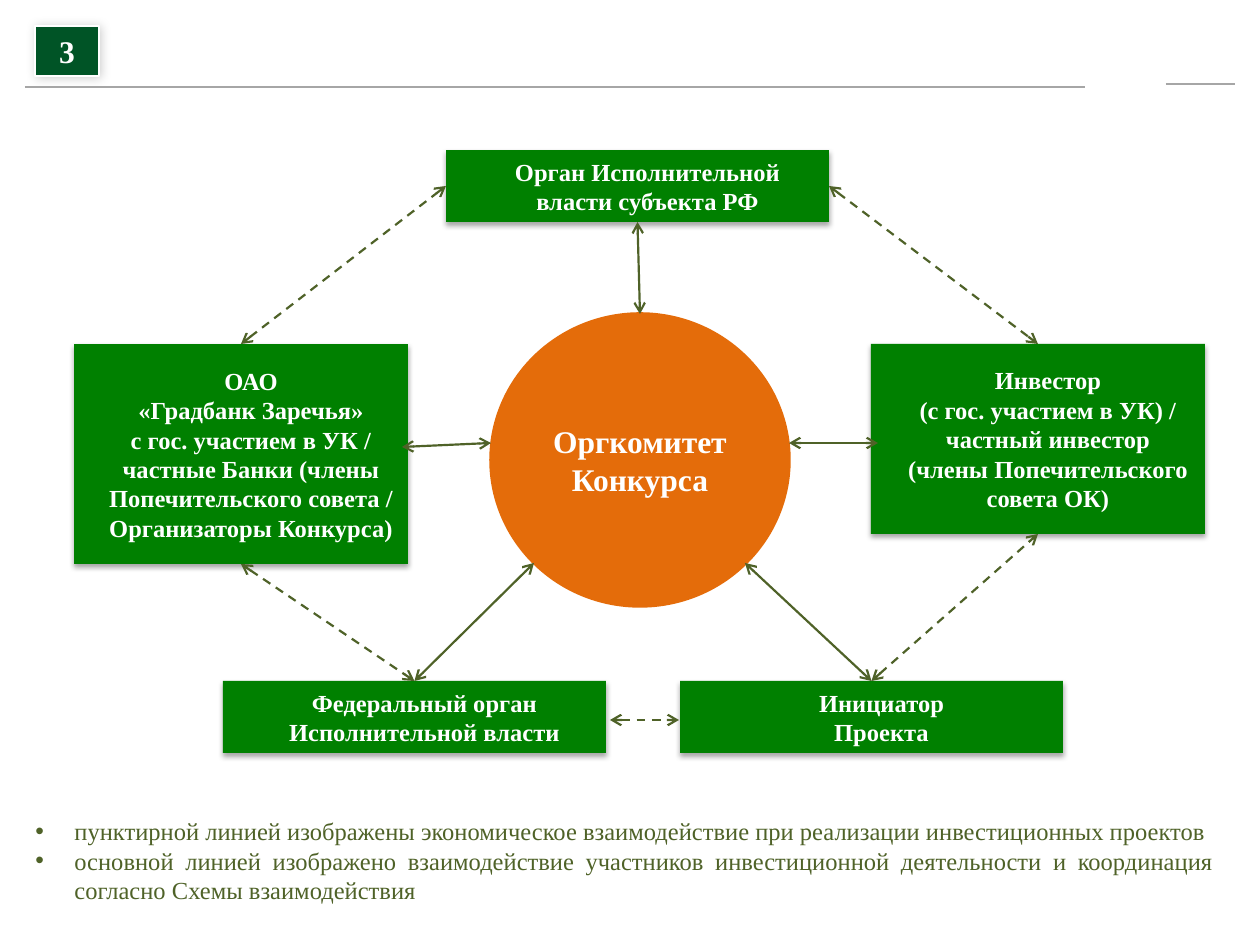
import pptx
import pptx.dml.color
import pptx.enum.dml
import pptx.enum.shapes
import pptx.enum.text
import pptx.oxml
import pptx.oxml.ns
import pptx.util
from lxml import etree

EMU_PER_PX = 914400 / 126
FONT = "Times New Roman"
GREEN, ORANGE, DARK_GREEN = "008000", "E46C0A", "005426"
OLIVE, GREY, WHITE = "4F6228", "A6A6A6", "FFFFFF"
TOP, LEFT, BOTTOM, RIGHT = range(4)

qn = pptx.oxml.ns.qn
shape_type = pptx.enum.shapes.MSO_SHAPE
align = pptx.enum.text.PP_ALIGN
anchor = pptx.enum.text.MSO_ANCHOR


def px(*lengths):
    """Turn pixel lengths into EMU."""
    return [pptx.util.Emu(round(length * EMU_PER_PX)) for length in lengths]


def rgb(code):
    return pptx.dml.color.RGBColor.from_string(code)


deck = pptx.Presentation()
deck.slide_width, deck.slide_height = px(1260, 945)
slide = deck.slides.add_slide(deck.slide_layouts[6])

# Participants, committee and page number
box = dict(kind=shape_type.RECTANGLE, fill=GREEN, line=None, size=14, indent=20,
           anchor=anchor.MIDDLE, shadow=(35, 3.1, 1.8, 90))
committee = dict(kind=shape_type.OVAL, fill=ORANGE, line=(ORANGE, 2), size=18, indent=0,
                 anchor=anchor.MIDDLE, shadow=None)
page_number = dict(kind=shape_type.RECTANGLE, fill=DARK_GREEN, line=(WHITE, 0.75), size=18,
                   indent=0, anchor=anchor.TOP, shadow=(20, 6, 1, 45))
nodes = {
    "initiator": (box, (680, 681, 383, 72), ["Инициатор", "Проекта"]),
    "regional": (box, (446, 150, 383, 72), ["Орган Исполнительной власти субъекта РФ"]),
    "federal": (box, (223, 681, 383, 72), ["Федеральный орган Исполнительной власти"]),
    "investor": (box, (871, 344, 334, 190), [
        "Инвестор",
        "(с гос. участием в УК) / частный инвестор (члены Попечительского совета ОК)"]),
    "bank": (box, (74, 344, 334, 220), [
        "ОАО", "«Градбанк Заречья»",
        "с гос. участием в УК / частные Банки (члены Попечительского совета / "
        "Организаторы Конкурса)"]),
    "committee": (committee, (491, 314, 298, 292), ["Оргкомитет Конкурса"]),
    "page": (page_number, (35, 26, 64, 50), ["3"]),
}
placed = {}
for name, (style, place, paragraphs) in nodes.items():
    node = placed[name] = slide.shapes.add_shape(style["kind"], *px(*place))
    node.fill.solid()
    node.fill.fore_color.rgb = rgb(style["fill"])
    if style["line"]:
        color, width = style["line"]
        node.line.color.rgb = rgb(color)
        node.line.width = pptx.util.Pt(width)
    else:
        node.line.fill.background()
    node.shadow.inherit = False
    if style["shadow"]:
        alpha, blur, distance, angle = style["shadow"]
        effects = node._element.spPr.find(qn("a:effectLst"))
        shade = etree.SubElement(
            effects, qn("a:outerShdw"), blurRad=str(pptx.util.Pt(blur)),
            dist=str(pptx.util.Pt(distance)), dir=str(angle * 60000), rotWithShape="0")
        black = etree.SubElement(shade, qn("a:srgbClr"), val="000000")
        etree.SubElement(black, qn("a:alpha"), val=str(alpha * 1000))
    frame = node.text_frame
    frame.word_wrap = True
    frame.vertical_anchor = style["anchor"]
    frame.text = "\n".join(paragraphs)
    for paragraph in frame.paragraphs:
        paragraph.alignment = align.CENTER
        if style["indent"]:
            paragraph._p.get_or_add_pPr().set("marL", str(px(style["indent"])[0]))
        font_values = dict(name=FONT, size=pptx.util.Pt(style["size"]), bold=True)
        for attribute, value in font_values.items():
            setattr(paragraph.font, attribute, value)
        paragraph.font.color.rgb = rgb(WHITE)

# Lines: an end is either (participant, side) or a point
rule = dict(color=GREY, width=1, dashed=False, arrows=False)
economic = dict(color=OLIVE, width=1.25, dashed=True, arrows=True)
coordination = dict(color=OLIVE, width=1.25, dashed=False, arrows=True)
links = [
    (rule, (25, 87), (1085, 87)),
    (rule, (1166, 84), (1235, 84)),
    (economic, ("bank", TOP), ("regional", LEFT)),
    (economic, ("bank", BOTTOM), ("federal", TOP)),
    (economic, (610, 720), (679, 720)),
    (economic, ("initiator", TOP), ("investor", BOTTOM)),
    (economic, ("regional", RIGHT), ("investor", TOP)),
    (coordination, ("regional", BOTTOM), (640, 314)),
    (coordination, (789, 443), (878, 443)),
    (coordination, (745, 563), ("initiator", TOP)),
    (coordination, (534, 563), ("federal", TOP)),
    (coordination, (491, 443), (402, 447)),
]
for style, start, end in links:
    points = [(0, 0) if point[0] in placed else point for point in (start, end)]
    link = slide.shapes.add_connector(
        pptx.enum.shapes.MSO_CONNECTOR.STRAIGHT, *px(*points[0], *points[1]))
    for point, connect in ((start, link.begin_connect), (end, link.end_connect)):
        if point[0] in placed:
            connect(placed[point[0]], point[1])
    link.line.color.rgb = rgb(style["color"])
    link.line.width = pptx.util.Pt(style["width"])
    if style["dashed"]:
        link.line.dash_style = pptx.enum.dml.MSO_LINE.DASH
    if style["arrows"]:
        for tip in ("a:headEnd", "a:tailEnd"):
            etree.SubElement(link.line._get_or_add_ln(), qn(tip), type="arrow")
    etree.SubElement(link._element.spPr, qn("a:effectLst"))

# Legend
legend = slide.shapes.add_textbox(*px(23, 810, 1203, 102)).text_frame
legend.word_wrap = True
legend.text = "\n".join([
    "пунктирной линией изображены экономическое взаимодействие при реализации "
    "инвестиционных проектов",
    "основной линией изображено взаимодействие участников инвестиционной деятельности "
    "и координация согласно Схемы взаимодействия",
])
for paragraph in legend.paragraphs:
    paragraph.alignment = align.JUSTIFY
    properties = paragraph._p.get_or_add_pPr()
    hang = px(39)[0]
    properties.set("marL", str(hang))
    properties.set("indent", str(-hang))
    etree.SubElement(properties, qn("a:buFont"), typeface="Arial")
    etree.SubElement(properties, qn("a:buChar"), char="•")
    for attribute, value in dict(name=FONT, size=pptx.util.Pt(14)).items():
        setattr(paragraph.font, attribute, value)
    paragraph.font.color.rgb = rgb(OLIVE)

deck.save("out.pptx")
